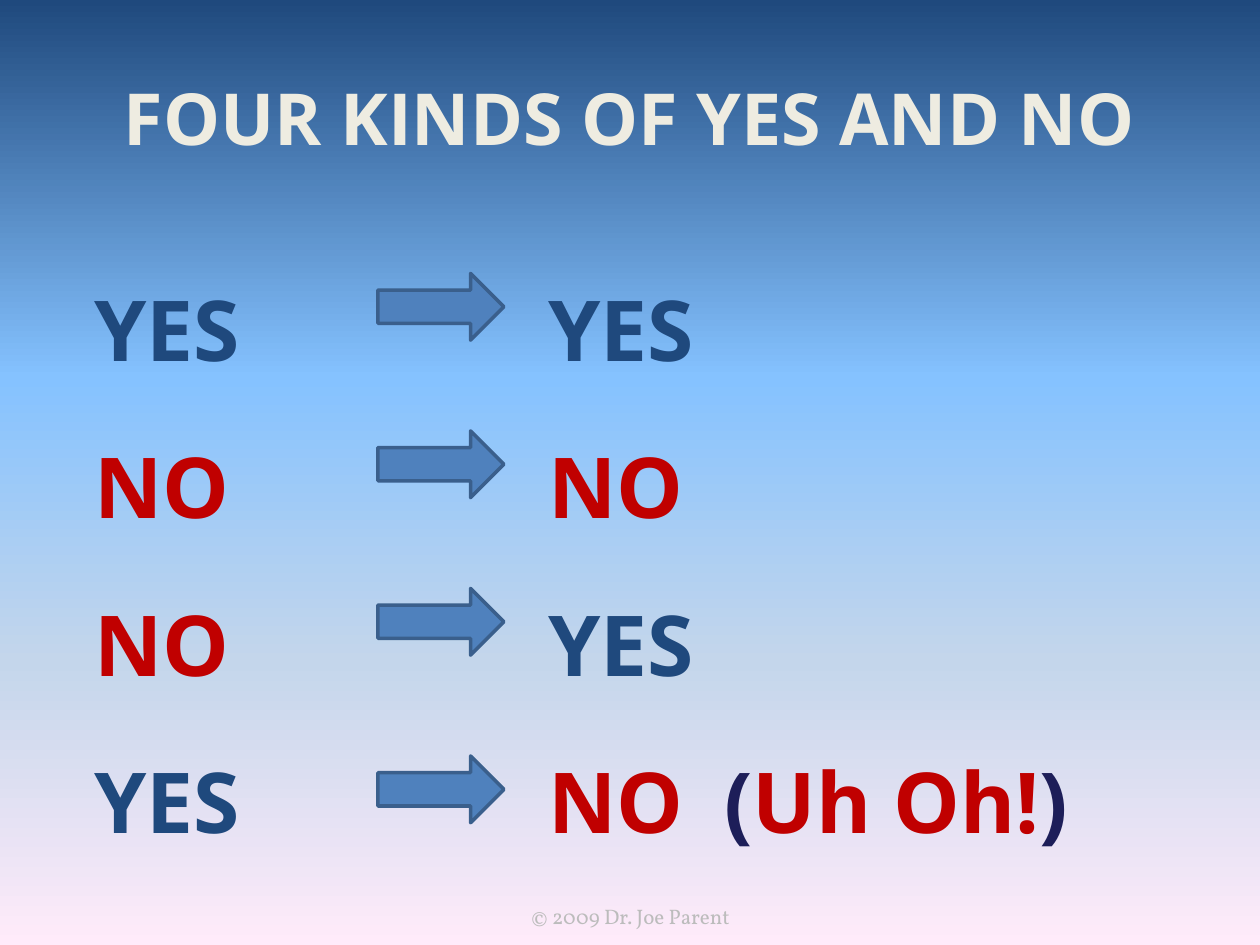
from lxml.etree import SubElement
from pptx import Presentation
from pptx.dml.color import RGBColor
from pptx.enum.shapes import MSO_SHAPE
from pptx.enum.text import MSO_ANCHOR, PP_ALIGN
from pptx.oxml.ns import qn
from pptx.util import Inches, Pt

NAVY, RED, INDIGO = "1F497D", "C00000", "1D1E59"
BACKGROUND_STOPS = [(0, NAVY), (40, "85C2FF"), (70, "C4D6EB"), (100, "FFEBFA")]
TITLE_FONT = {"name": "Open Sans", "size": Pt(41), "bold": True}
BODY_FONT = {"name": "Open Sans", "size": Pt(48), "bold": True}
FOOTER_FONT = {"name": "Vollkorn", "size": Pt(12), "bold": False}

ANSWER_ROWS = [
    [("YES", NAVY), ("\tYES", NAVY)],
    [("NO", RED), ("\tNO", RED)],
    [("NO", RED), ("\tYES", NAVY)],
    [("YES", NAVY), ("\tNO", RED), ("\t(", INDIGO), ("Uh Oh!", RED), (")", INDIGO)],
]
ARROW_TOPS = [2.17, 3.42, 4.67, 6]
TAB_STOPS = [3.6, 5]


def color(hex_string):
    return RGBColor.from_string(hex_string)


def add_background(slide):
    fill = slide.background.fill
    fill.gradient()
    fill.gradient_angle = 270
    stop_list = next(slide.element.iter(qn("a:gsLst")))
    for stop in list(stop_list):
        stop_list.remove(stop)
    for percent, hex_string in BACKGROUND_STOPS:
        stop = SubElement(stop_list, qn("a:gs"), pos=str(percent * 1000))
        SubElement(stop, qn("a:srgbClr"), val=hex_string)


def add_text_frame(slide, box, anchor):
    frame = slide.shapes.add_textbox(*map(Inches, box)).text_frame
    frame.word_wrap = True
    frame.vertical_anchor = anchor
    return frame


def add_run(paragraph, text, hex_string, font_format):
    run = paragraph.add_run()
    run.text = text
    run.font.color.rgb = color(hex_string)
    for name, value in font_format.items():
        setattr(run.font, name, value)


def add_centered_line(slide, box, text, hex_string, font_format, anchor):
    paragraph = add_text_frame(slide, box, anchor).paragraphs[0]
    paragraph.alignment = PP_ALIGN.CENTER
    add_run(paragraph, text, hex_string, font_format)


def add_answers(slide, box):
    """Write one paragraph per row, its columns aligned by tab stops."""
    frame = add_text_frame(slide, box, MSO_ANCHOR.TOP)
    frame.margin_left = Inches(0.25)
    for index, row in enumerate(ANSWER_ROWS):
        paragraph = frame.add_paragraph() if index else frame.paragraphs[0]
        paragraph.line_spacing = Pt(90)
        tab_list = SubElement(paragraph._p.get_or_add_pPr(), qn("a:tabLst"))
        for position in TAB_STOPS:
            SubElement(tab_list, qn("a:tab"), pos=str(Inches(position)), algn="l")
        for text, hex_string in row:
            add_run(paragraph, text, hex_string, BODY_FONT)


def add_arrow(slide, box):
    arrow = slide.shapes.add_shape(MSO_SHAPE.RIGHT_ARROW, *map(Inches, box))
    arrow.shadow.inherit = False
    arrow.fill.solid()
    arrow.fill.fore_color.rgb = color("4F81BD")
    arrow.line.color.rgb = color("3A5F8C")
    arrow.line.width = Pt(2)


def main():
    presentation = Presentation()
    presentation.slide_width, presentation.slide_height = Inches(10), Inches(7.5)
    slide = presentation.slides.add_slide(presentation.slide_layouts[6])
    add_background(slide)
    add_centered_line(slide, (0.5, 0.3, 9, 1.25), "FOUR KINDS OF YES AND NO",
                      "EEECE1", TITLE_FONT, MSO_ANCHOR.MIDDLE)
    add_answers(slide, (0.5, 1.7, 9, 5.15))
    for top in ARROW_TOPS:
        add_arrow(slide, (3, top, 1, 0.53))
    add_centered_line(slide, (3.42, 7.02, 3.17, 0.4), "© 2009 Dr. Joe Parent",
                      "BCBCBC", FOOTER_FONT, MSO_ANCHOR.BOTTOM)
    presentation.save("out.pptx")


if __name__ == "__main__":
    main()
